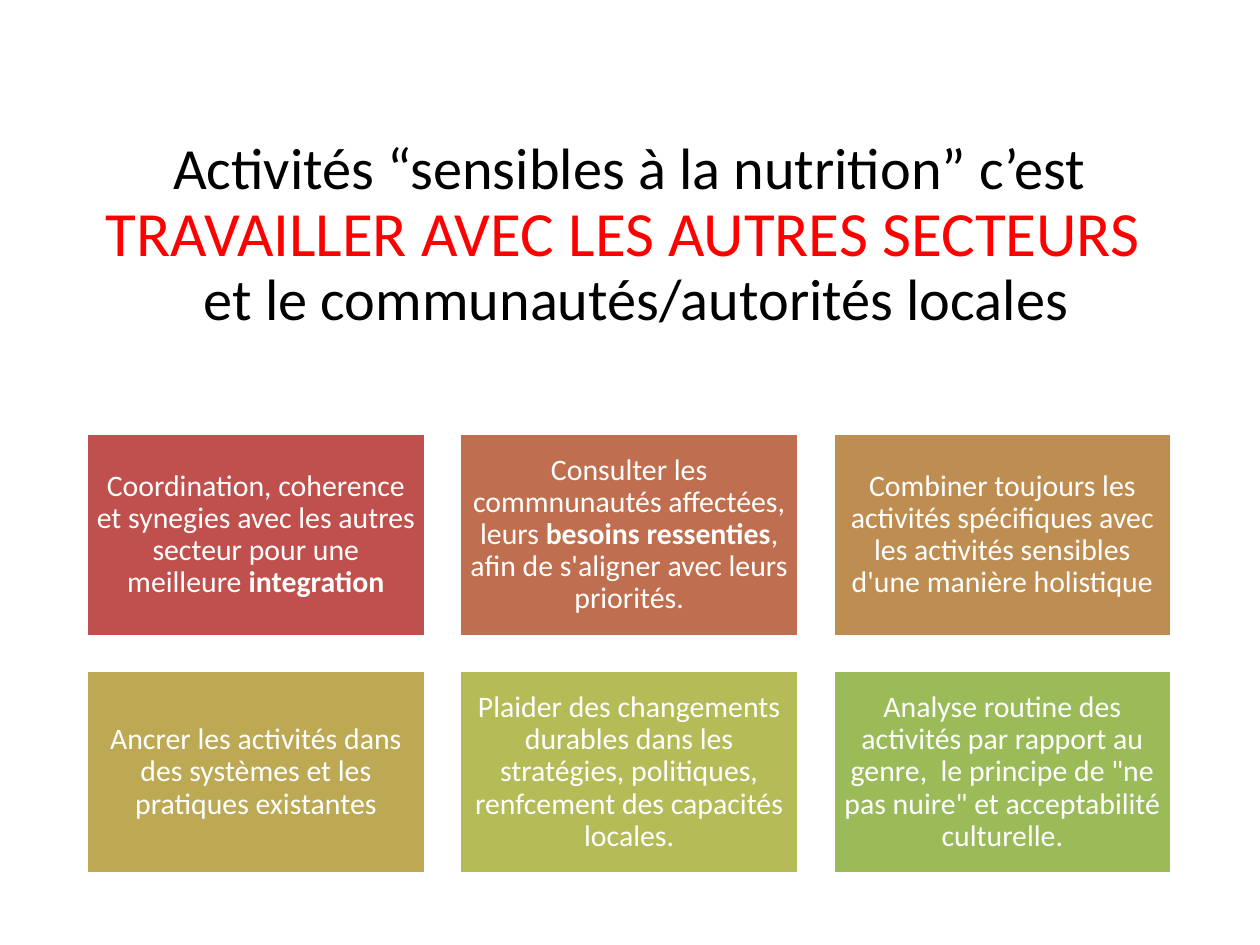
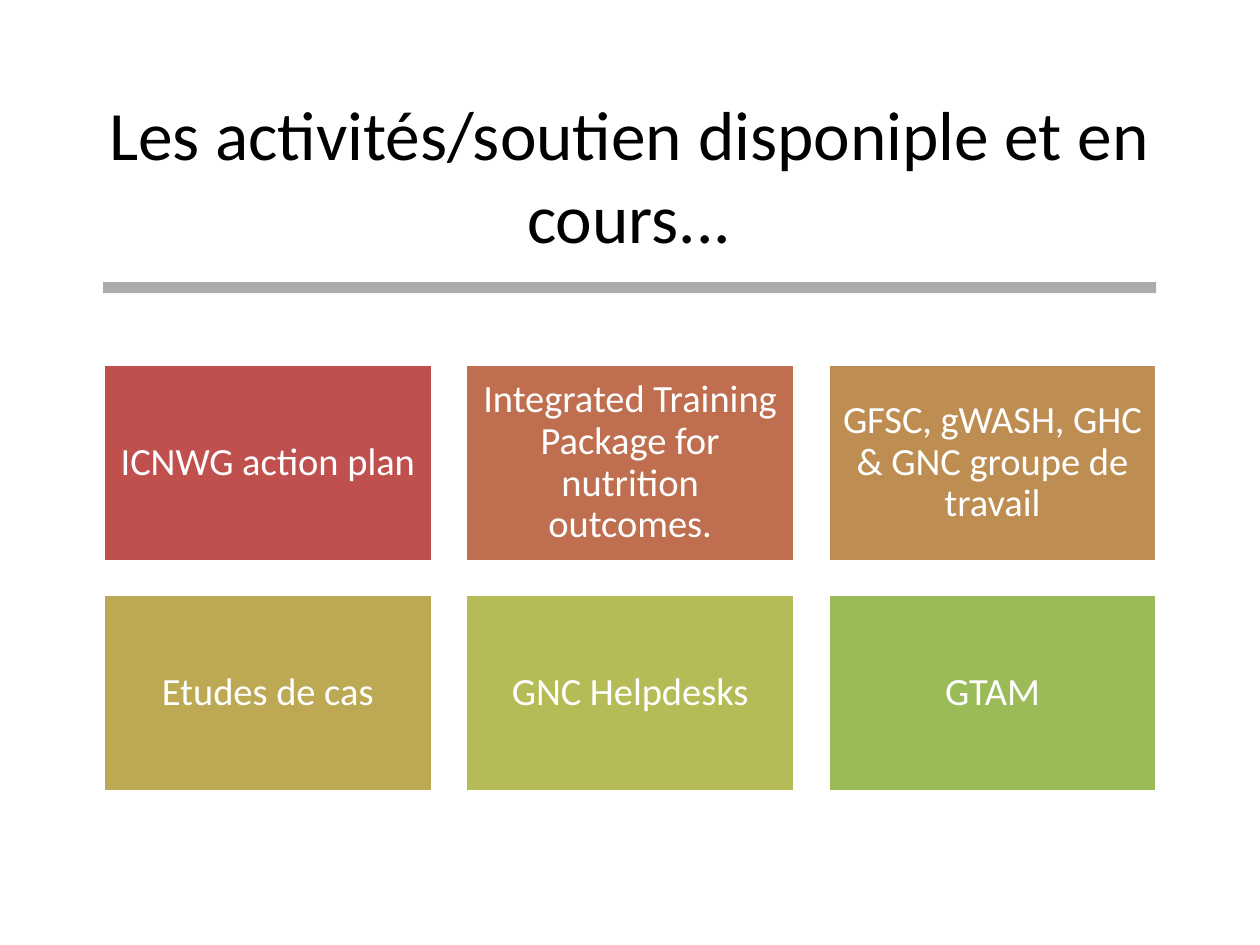
from lxml import etree
from pptx import Presentation
from pptx import util as u
from pptx.dml import color
from pptx.enum import shapes, text
from pptx.oxml import ns

FONT = "Calibri"
BLACK, WHITE, RED, GREY = "000000", "FFFFFF", "FF0000", "808080"
CARD_FILLS = ["C0504D", "BF6F4F", "BE8D52", "BDA954", "B5BC57", "9BBB59"]
COLUMNS = 3


def paint(target, hex_code):
    """Give a fill or a font a solid colour."""
    if hasattr(target, "solid"):
        target.solid()
        target.fore_color.rgb = color.RGBColor.from_string(hex_code)
    else:
        target.color.rgb = color.RGBColor.from_string(hex_code)


def write(para, words, size=18, hex_code=BLACK, bold=False):
    """Add one formatted run to a paragraph."""
    span = para.add_run()
    span.text = words
    span.font.name = FONT
    span.font.size = u.Pt(size)
    span.font.bold = bold
    paint(span.font, hex_code)


# Content: lengths in cm; a "\v" run is a line break, asterisks enclose bold words
pages = [
    {
        "title": [
            ("Activités “sensibles à la nutrition” c’est ", 33.3, BLACK),
            ("TRAVAILLER AVEC LES AUTRES SECTEURS ", 36, RED),
            ("\v", 36, RED),
            (" et le communautés/autorités locales", 33.3, BLACK),
        ],
        "title_box": (1.75, 2.92, 21.9, 3.68),
        "title_spacing": 0.9,
        "bar": None,
        "grid": {"left": 1.74, "top": 8.73, "width": 6.84},
        "text_size": 17,
        "inset": 0.18,
        "cards": [
            "Coordination, coherence et synegies avec les autres secteur pour une "
            "meilleure *integration*",
            "Consulter les commnunautés affectées, leurs *besoins ressenties*, "
            "afin de s'aligner avec leurs priorités.",
            "Combiner toujours les activités spécifiques avec les activités "
            "sensibles d'une manière holistique",
            "Ancrer les activités dans des systèmes et les pratiques existantes",
            "Plaider des changements durables dans les stratégies, politiques, "
            "renfcement des capacités locales.",
            "Analyse routine des activités par rapport au genre,  le principe de "
            "\"ne pas nuire\" et acceptabilité culturelle.",
        ],
    },
    {
        "title": [("Les activités/soutien disponiple et en cours...", 39.6, BLACK)],
        "title_box": (1.8, 1.68, 21.77, 3.68),
        "title_spacing": 1.0,
        "bar": (2.08, 5.69, 21.23, 0.22),
        "grid": {"left": 2.08, "top": 7.34, "width": 6.64},
        "text_size": 22,
        "inset": 0.23,
        "cards": [
            "ICNWG action plan",
            "Integrated Training Package for nutrition outcomes.",
            "GFSC, gWASH, GHC & GNC groupe de travail",
            "Etudes de cas",
            "GNC Helpdesks",
            "GTAM",
        ],
    },
]

deck = Presentation()
deck.slide_width, deck.slide_height = u.Cm(25.4), u.Cm(19.05)
title_only = deck.slide_layouts[5]

for content in pages:
    page = deck.slides.add_slide(title_only)

    # Title
    title = page.shapes.title
    title.left, title.top, title.width, title.height = map(u.Cm, content["title_box"])
    frame = title.text_frame
    frame.auto_size = text.MSO_AUTO_SIZE.NONE
    frame.vertical_anchor = text.MSO_ANCHOR.MIDDLE
    para = frame.paragraphs[0]
    para.alignment = text.PP_ALIGN.CENTER
    para.line_spacing = content["title_spacing"]
    for words, size, hex_code in content["title"]:
        if words == "\v":
            para.add_line_break()
        else:
            write(para, words, size=size, hex_code=hex_code)

    # Translucent bar under the title
    if content["bar"]:
        bar = page.shapes.add_shape(
            shapes.MSO_SHAPE.RECTANGLE, *map(u.Cm, content["bar"]))
        bar.shadow.inherit = False
        bar.line.fill.background()
        paint(bar.fill, GREY)
        shade = bar.fill._xPr.find(".//" + ns.qn("a:srgbClr"))
        etree.SubElement(shade, ns.qn("a:alpha"), val="65000")

    # Grid of cards: height is 60 % and gap 10 % of the card width
    grid = content["grid"]
    width = grid["width"]
    height, gap = 0.6 * width, 0.1 * width
    for index, (words, fill) in enumerate(zip(content["cards"], CARD_FILLS)):
        row, column = divmod(index, COLUMNS)
        box = page.shapes.add_shape(
            shapes.MSO_SHAPE.RECTANGLE,
            u.Cm(grid["left"] + column * (width + gap)),
            u.Cm(grid["top"] + row * (height + gap)),
            u.Cm(width), u.Cm(height))
        box.shadow.inherit = False
        paint(box.fill, fill)
        paint(box.line.fill, WHITE)
        box.line.width = u.Pt(2)

        frame = box.text_frame
        frame.word_wrap = True
        frame.vertical_anchor = text.MSO_ANCHOR.MIDDLE
        frame.margin_left = frame.margin_right = u.Cm(content["inset"])
        frame.margin_top = frame.margin_bottom = u.Cm(content["inset"])
        para = frame.paragraphs[0]
        para.alignment = text.PP_ALIGN.CENTER
        para.line_spacing = 0.9
        for part, piece in enumerate(words.split("*")):
            if piece:
                write(para, piece, size=content["text_size"], hex_code=WHITE,
                      bold=part % 2 == 1)

deck.save("out.pptx")
